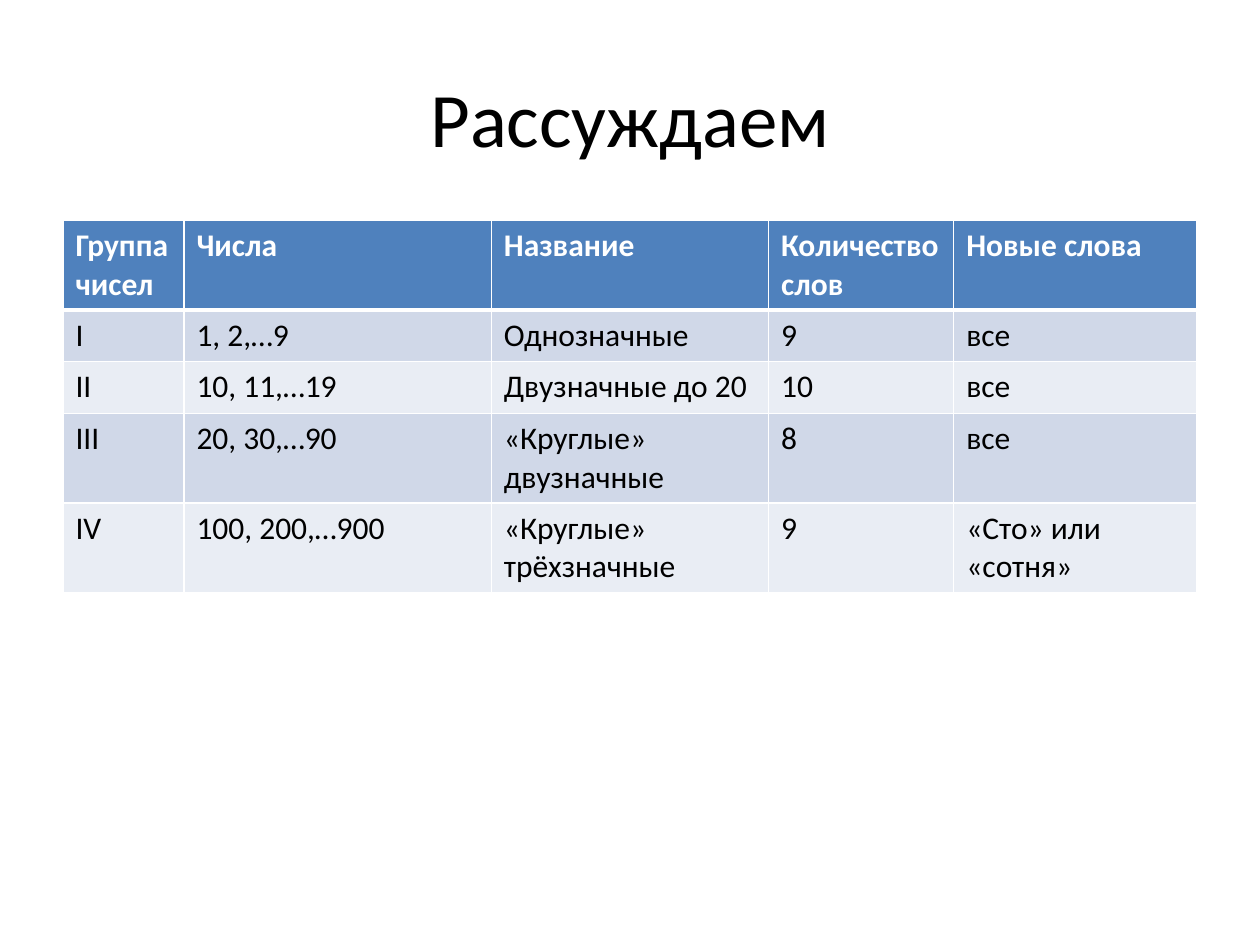
from dataclasses import dataclass

from lxml.etree import SubElement
from pptx import Presentation
from pptx.dml.color import RGBColor
from pptx.enum.text import MSO_ANCHOR, PP_ALIGN
from pptx.oxml.ns import qn
from pptx.util import Inches, Pt


@dataclass(frozen=True)
class Theme:
    font: str = "Calibri"
    title_size: int = 44
    table_size: int = 18
    ink: str = "000000"
    paper: str = "FFFFFF"
    header: str = "4F81BD"
    bands: tuple = ("D0D8E8", "E9EDF4")
    grid_line: float = 1
    header_line: float = 3


THEME = Theme()
WIDTH, HEIGHT = Inches(10), Inches(7.5)
MARGIN = 0.05
TITLE_TOP, TITLE_HEIGHT = 0.04, 1 / 6
TABLE_TOP = 1.75 / 7.5
ROW_HEIGHT = Inches(0.41)
COLUMN_WIDTHS = (0.96, 2.44, 2.2, 1.47, 1.93)
NUMBER_GROUPS = (
    ("Группа чисел", "Числа", "Название", "Количество слов", "Новые слова"),
    ("I", "1, 2,…9", "Однозначные", "9", "все"),
    ("II", "10, 11,…19", "Двузначные до 20", "10", "все"),
    ("III", "20, 30,…90", "«Круглые» двузначные", "8", "все"),
    ("IV", "100, 200,…900", "«Круглые» трёхзначные", "9", "«Сто» или «сотня»"),
)


def style_text(paragraph, size, color, bold=False):
    font = paragraph.font
    font.name = THEME.font
    font.size = Pt(size)
    font.bold = bold
    font.color.rgb = RGBColor.from_string(color)


def set_borders(cell, widths):
    properties = cell._tc.get_or_add_tcPr()
    for position, (side, width) in enumerate(widths.items()):
        line = SubElement(properties, qn(f"a:ln{side}"), w=str(Pt(width)))
        fill = SubElement(line, qn("a:solidFill"))
        SubElement(fill, qn("a:srgbClr"), val=THEME.paper)
        properties.insert(position, line)


def fill_cell(cell, text, row):
    is_header = row == 0
    cell.text = text
    style_text(
        cell.text_frame.paragraphs[0],
        THEME.table_size,
        THEME.paper if is_header else THEME.ink,
        is_header,
    )
    background = THEME.header if is_header else THEME.bands[(row - 1) % 2]
    cell.fill.solid()
    cell.fill.fore_color.rgb = RGBColor.from_string(background)
    widths = dict.fromkeys("LRTB", THEME.grid_line)
    if is_header:
        widths["B"] = THEME.header_line
    elif row == 1:
        widths["T"] = THEME.header_line
    set_borders(cell, widths)


def add_title(slide, text):
    title = slide.shapes.title
    title.left, title.top = int(WIDTH * MARGIN), int(HEIGHT * TITLE_TOP)
    title.width, title.height = int(WIDTH * (1 - 2 * MARGIN)), int(HEIGHT * TITLE_HEIGHT)
    title.text_frame.text = text
    title.text_frame.vertical_anchor = MSO_ANCHOR.MIDDLE
    heading = title.text_frame.paragraphs[0]
    heading.alignment = PP_ALIGN.CENTER
    style_text(heading, THEME.title_size, THEME.ink)


def add_groups_table(slide, rows):
    table = slide.shapes.add_table(
        len(rows),
        len(COLUMN_WIDTHS),
        int(WIDTH * MARGIN),
        int(HEIGHT * TABLE_TOP),
        Inches(sum(COLUMN_WIDTHS)),
        ROW_HEIGHT * len(rows),
    ).table
    for column, width in zip(table.columns, COLUMN_WIDTHS):
        column.width = Inches(width)
    for row, texts in enumerate(rows):
        for column, text in enumerate(texts):
            fill_cell(table.cell(row, column), text, row)


def main():
    presentation = Presentation()
    presentation.slide_width, presentation.slide_height = WIDTH, HEIGHT
    slide = presentation.slides.add_slide(presentation.slide_layouts.get_by_name("Title Only"))
    add_title(slide, "Рассуждаем")
    add_groups_table(slide, NUMBER_GROUPS)
    presentation.save("out.pptx")


if __name__ == "__main__":
    main()
